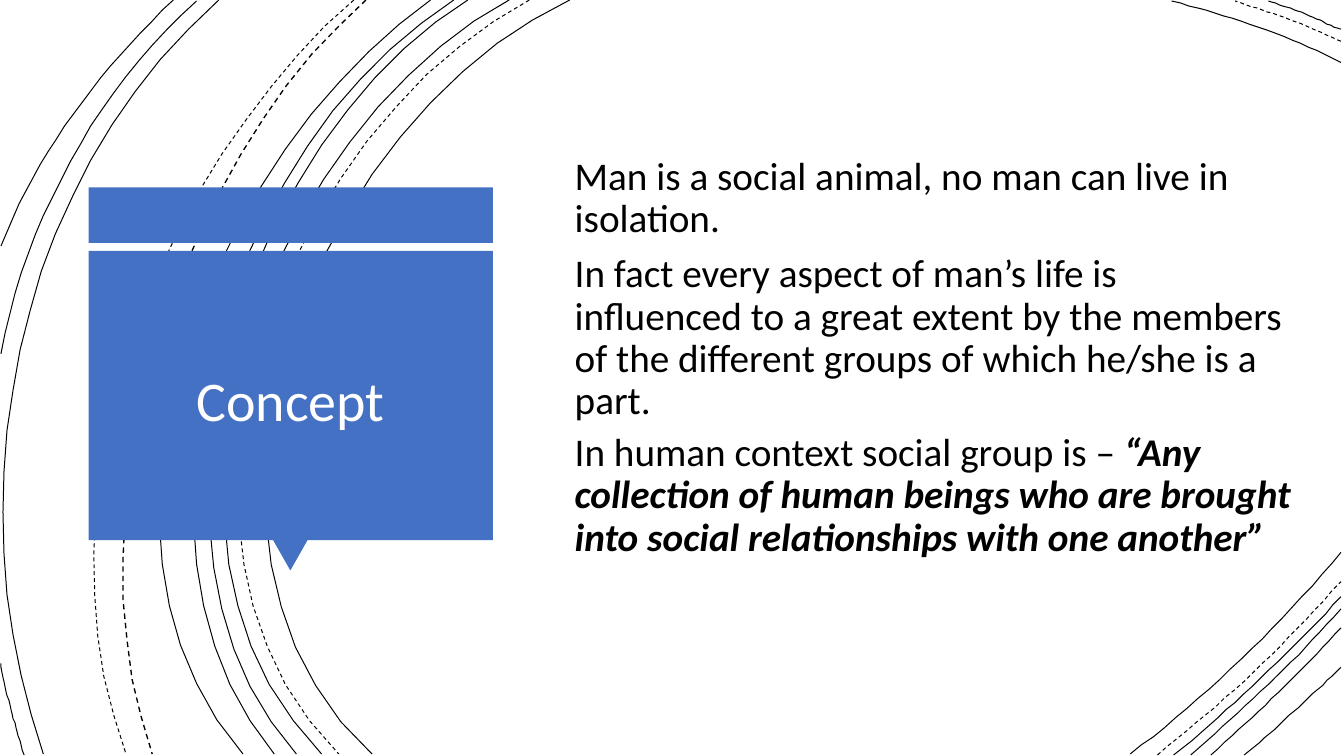
from dataclasses import dataclass
from math import prod

from pptx import Presentation
from pptx.dml.color import RGBColor
from pptx.enum.dml import MSO_LINE
from pptx.enum.shapes import MSO_SHAPE
from pptx.enum.text import MSO_ANCHOR, MSO_AUTO_SIZE, PP_ALIGN
from pptx.util import Pt

PX = 9144  # EMU per px, 100 px to the inch
STEPS = 20  # segments in each arc
DASH = MSO_LINE.DASH
RECT, WEDGE = MSO_SHAPE.RECTANGLE, MSO_SHAPE.FLOWCHART_MERGE
TOP, MIDDLE = MSO_ANCHOR.TOP, MSO_ANCHOR.MIDDLE
LEFT = PP_ALIGN.LEFT
NO_FIT = MSO_AUTO_SIZE.NONE


@dataclass(frozen=True)
class Theme:
    font: str = "Calibri"
    ink: RGBColor = RGBColor(0x00, 0x00, 0x00)
    blue: RGBColor = RGBColor(0x44, 0x71, 0xC4)
    white: RGBColor = RGBColor(0xFF, 0xFF, 0xFF)
    title: int = 40
    body: int = 28
    lead: float = 30.2
    thin: float = 0.72
    bold: float = 0.96


THEME = Theme()


@dataclass(frozen=True)
class Box:
    left: int
    top: int
    width: int
    height: int

    def place(self, shape) -> None:
        shape.left, shape.top = self.left * PX, self.top * PX
        shape.width, shape.height = self.width * PX, self.height * PX


@dataclass(frozen=True)
class Arc:
    """A smooth line through five evenly timed knots."""
    knots: tuple[tuple[int, int], ...]
    dash: bool = False
    width: float = THEME.thin


@dataclass(frozen=True)
class Block:
    kind: MSO_SHAPE
    box: Box


@dataclass(frozen=True)
class Para:
    text: str
    gap: int = 0
    quote: str = ""


ARCS = (
    # Left sweep
    Arc(((565, 0), (397, 136), (288, 339), (269, 560), (369, 748))),
    Arc(((525, 0), (364, 140), (260, 342), (242, 560), (336, 748)), True),
    Arc(((505, 0), (347, 141), (245, 343), (227, 560), (319, 748))),
    Arc(((464, 0), (319, 144), (227, 346), (212, 563), (294, 748))),
    Arc(((450, 0), (305, 145), (213, 345), (195, 560), (272, 748))),
    Arc(((427, 0), (283, 148), (185, 347), (161, 560), (241, 748))),
    Arc(((363, 0), (239, 153), (155, 347), (122, 554), (151, 748)), True, THEME.bold),
    Arc(((351, 0), (220, 153), (129, 344), (93, 550), (125, 748)), True),
    Arc(((217, 0), (90, 159), (20, 347), (4, 549), (43, 748))),
    Arc(((195, 1), (125, 76), (70, 160), (28, 252), (1, 351))),
    Arc(((1, 658), (5, 681), (11, 704), (17, 726), (24, 749))),
    Arc(((172, 0), (120, 54), (73, 113), (33, 176), (1, 244))),
    # Top right corner
    Arc(((1330, 62), (1290, 43), (1248, 27), (1205, 13), (1162, 1))),
    Arc(((1330, 41), (1305, 30), (1278, 19), (1252, 10), (1225, 1)), True),
    Arc(((1330, 29), (1313, 22), (1295, 14), (1276, 7), (1258, 1))),
    # Bottom right corner
    Arc(((1121, 748), (1177, 703), (1231, 654), (1282, 602), (1330, 548))),
    Arc(((1148, 749), (1196, 709), (1243, 667), (1287, 623), (1330, 577)), True),
    Arc(((1164, 749), (1208, 712), (1250, 673), (1291, 633), (1330, 592))),
    Arc(((1181, 749), (1220, 714), (1258, 679), (1295, 642), (1330, 604))),
    Arc(((1201, 749), (1235, 718), (1268, 687), (1300, 655), (1330, 623))),
    Arc(((1234, 749), (1259, 728), (1283, 706), (1307, 684), (1330, 662))),
)

CARD = Box(88, 249, 401, 287)
BLOCKS = (
    Block(RECT, Box(88, 186, 401, 55)),
    Block(WEDGE, Box(271, 536, 34, 30)),
    Block(RECT, CARD),
)

PARAS = (
    Para("Man is a social animal, no man can live in isolation."),
    Para("In fact every aspect of man’s life is\vinfluenced to a great extent by "
         "the members of the different groups of which he/she is a part.", 9),
    Para("In human context social group is – ", 7,
         "“Any collection of human beings who are brought into social "
         "relationships with one another”"),
)


def trace(knots: tuple[tuple[int, int], ...]) -> list[tuple[int, int]]:
    """Sample the polynomial that runs through all knots."""
    span = range(len(knots))
    points = []
    for step in range(STEPS + 1):
        t = step * (len(knots) - 1) / STEPS
        parts = [prod((t - j) / (i - j) for j in span if j != i) for i in span]
        x, y = (round(sum(w * k[axis] for w, k in zip(parts, knots)))
                for axis in (0, 1))
        points.append((x, y))
    return points


def draw_arc(slide, arc: Arc) -> None:
    start, *rest = trace(arc.knots)
    path = slide.shapes.build_freeform(*start, scale=PX)
    path.add_line_segments(rest, close=False)
    shape = path.convert_to_shape()
    shape.shadow.inherit = False
    shape.fill.background()
    shape.line.color.rgb = THEME.ink
    shape.line.width = Pt(arc.width)
    if arc.dash:
        shape.line.dash_style = DASH


def draw_block(slide, block: Block) -> None:
    shape = slide.shapes.add_shape(block.kind, 0, 0, 0, 0)
    block.box.place(shape)
    shape.shadow.inherit = False
    shape.fill.solid()
    shape.fill.fore_color.rgb = THEME.blue
    shape.line.fill.background()


def set_frame(slide, holder, box: Box, anchor: MSO_ANCHOR, left: int, top: int):
    """Place a placeholder in front of the shapes and set its insets."""
    slide.shapes._spTree.append(holder._element)
    box.place(holder)
    frame = holder.text_frame
    frame.word_wrap = True
    frame.auto_size = NO_FIT
    frame.vertical_anchor = anchor
    frame.margin_left, frame.margin_top = left * PX, top * PX
    frame.margin_right = frame.margin_bottom = 0
    return frame


def style(para, size: int, color: RGBColor) -> None:
    para.alignment = LEFT
    for run in para.runs:
        run.font.name = THEME.font
        run.font.size = Pt(size)
        run.font.color.rgb = color


def write_body(frame) -> None:
    for i, item in enumerate(PARAS):
        para = frame.add_paragraph() if i else frame.paragraphs[0]
        para.text = item.text
        if item.quote:
            run = para.add_run()
            run.text = item.quote
            run.font.bold = run.font.italic = True
        style(para, THEME.body, THEME.ink)
        para.line_spacing = Pt(THEME.lead)
        para.space_before = Pt(item.gap)
        # No bullet, no indent
        props = para._p.get_or_add_pPr()
        props.set("marL", "0")
        props.set("indent", "0")
        props.append(props.makeelement(
            "{http://schemas.openxmlformats.org/drawingml/2006/main}buNone", {}))


def main() -> None:
    deck = Presentation()
    deck.slide_width, deck.slide_height = 1333 * PX, 750 * PX
    slide = deck.slides.add_slide(deck.slide_layouts[1])
    for arc in ARCS:
        draw_arc(slide, arc)
    for block in BLOCKS:
        draw_block(slide, block)
    # Text
    title, body = slide.shapes.title, slide.placeholders[1]
    write_body(set_frame(slide, body, Box(569, 152, 721, 503), TOP, 1, 3))
    frame = set_frame(slide, title, CARD, MIDDLE, 107, 6)
    frame.text = "Concept"
    style(frame.paragraphs[0], THEME.title, THEME.white)
    deck.save("out.pptx")


if __name__ == "__main__":
    main()
